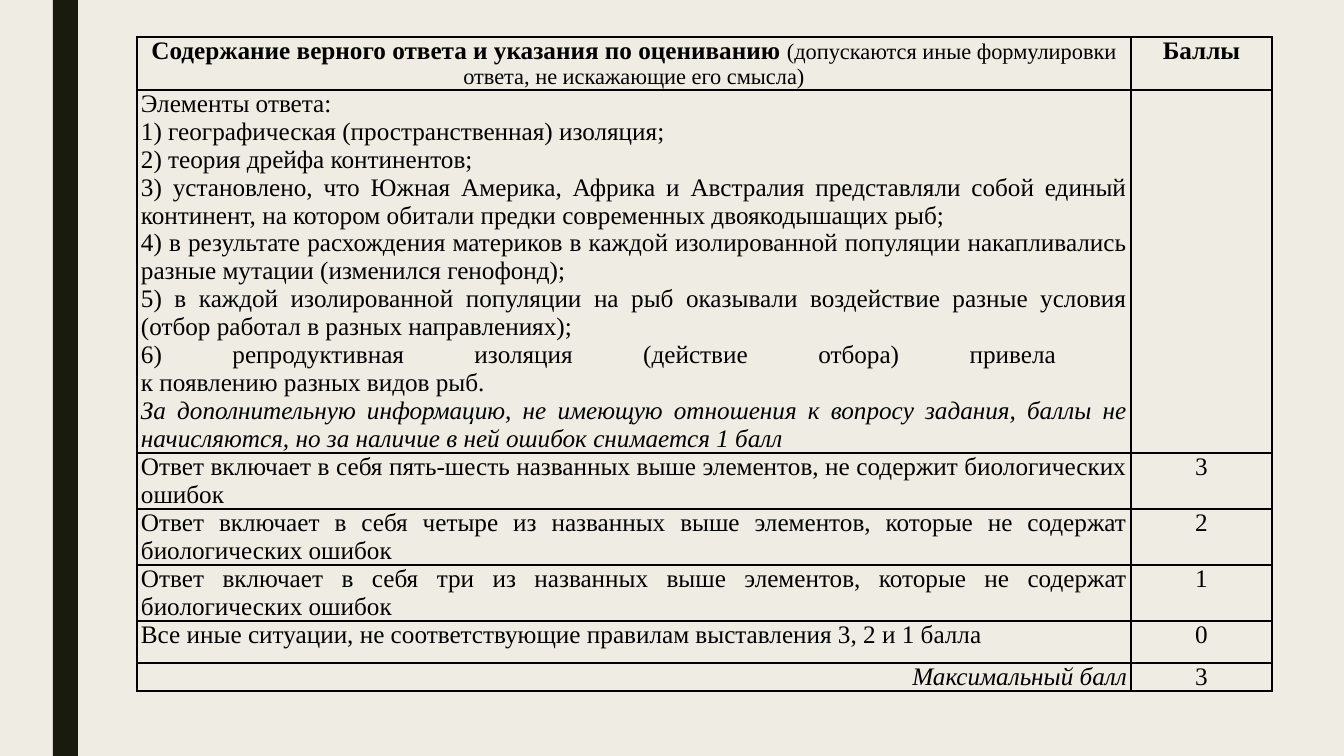
import pptx
import pptx.dml.color
import pptx.enum.shapes
import pptx.enum.text
import pptx.oxml
import pptx.oxml.ns
import pptx.util

PX = 12700 * 72 / 100.8  # EMU in one px
COLORS = {"background": "EFEDE3", "stripe": "191B0E", "ink": "000000"}
FONT = "Times New Roman"
ALIGN = pptx.enum.text.PP_ALIGN

COLUMN_WIDTHS = [994, 141]
ROW_HEIGHTS = [53, 363, 56, 56, 56, 42, 28]

HEADING = "Содержание верного ответа и указания по оцениванию "
HEADING_NOTE = "(допускаются иные формулировки ответа, не искажающие его смысла)"
ANSWER = [
    "Элементы ответа:",
    "1) географическая (пространственная) изоляция;",
    "2) теория дрейфа континентов;",
    "3) установлено, что Южная Америка, Африка и Австралия представляли собой "
    "единый континент, на котором обитали предки современных двоякодышащих рыб;",
    "4) в результате расхождения материков в каждой изолированной популяции "
    "накапливались разные мутации (изменился генофонд);",
    "5) в каждой изолированной популяции на рыб оказывали воздействие разные "
    "условия (отбор работал в разных направлениях);",
    "6) репродуктивная изоляция (действие отбора) привела \nк появлению разных видов рыб.",
]
ANSWER_NOTE = (
    "За дополнительную информацию, не имеющую отношения к вопросу задания, "
    "баллы не начисляются, но за наличие в ней ошибок снимается 1 балл"
)
CRITERIA = [
    ("Ответ включает в себя пять-шесть названных выше элементов, "
     "не содержит биологических ошибок", "3"),
    ("Ответ включает в себя четыре из названных выше элементов, "
     "которые не содержат биологических ошибок", "2"),
    ("Ответ включает в себя три из названных выше элементов, "
     "которые не содержат биологических ошибок", "1"),
    ("Все иные ситуации, не соответствующие правилам выставления 3, 2 и 1 балла", "0"),
]


def px(length):
    return pptx.util.Emu(round(length * PX))


def rgb(name):
    return pptx.dml.color.RGBColor.from_string(COLORS[name])


def style_font(font, size=18, bold=False, italic=False):
    font.name = FONT
    font.size = pptx.util.Pt(size)
    font.bold = bold
    font.italic = italic
    font.color.rgb = rgb("ink")


def write(paragraph, text, align, **style):
    paragraph.text = text
    paragraph.alignment = align
    style_font(paragraph.font, **style)


def format_cell(cell):
    """Clear fill, narrow margins and a thin black border on every side."""
    cell.margin_left = cell.margin_right = px(4)
    cell.margin_top = cell.margin_bottom = 0
    properties = cell._tc.get_or_add_tcPr()
    for side in ("lnL", "lnR", "lnT", "lnB"):
        properties.append(pptx.oxml.parse_xml(
            f'<a:{side} {pptx.oxml.ns.nsdecls("a")} w="12700"><a:solidFill>'
            f'<a:srgbClr val="{COLORS["ink"]}"/></a:solidFill></a:{side}>'))
    cell.fill.background()


def add_stripe(slide, left, top, width, height):
    stripe = slide.shapes.add_shape(
        pptx.enum.shapes.MSO_SHAPE.RECTANGLE, px(left), px(top), px(width), px(height))
    stripe.shadow.inherit = False
    stripe.fill.solid()
    stripe.fill.fore_color.rgb = rgb("stripe")
    stripe.line.fill.background()


def fill_heading(heading, points):
    paragraph = heading.text_frame.paragraphs[0]
    paragraph.alignment = ALIGN.CENTER
    for text, size, bold in ((HEADING, 18, True), (HEADING_NOTE, 16, False)):
        run = paragraph.add_run()
        run.text = text
        style_font(run.font, size, bold)
    write(points.text_frame.paragraphs[0], "Баллы", ALIGN.CENTER, bold=True)


def fill_answer(answer):
    frame = answer.text_frame
    for index, line in enumerate(ANSWER + [ANSWER_NOTE]):
        paragraph = frame.add_paragraph() if index else frame.paragraphs[0]
        write(paragraph, line, ALIGN.JUSTIFY, italic=line == ANSWER_NOTE)


def fill_score(criterion, points, text, score, align=ALIGN.JUSTIFY, italic=False):
    write(criterion.text_frame.paragraphs[0], text, align, italic=italic)
    write(points.text_frame.paragraphs[0], score, ALIGN.CENTER)


def add_rubric(slide, left, top):
    rubric = slide.shapes.add_table(
        len(ROW_HEIGHTS), len(COLUMN_WIDTHS), px(left), px(top),
        px(sum(COLUMN_WIDTHS)), px(sum(ROW_HEIGHTS))).table
    rubric.first_row = rubric.horz_banding = False
    for column, width in zip(rubric.columns, COLUMN_WIDTHS):
        column.width = px(width)
    for row, height in zip(rubric.rows, ROW_HEIGHTS):
        row.height = px(height)
    for cell in rubric.iter_cells():
        format_cell(cell)

    rows = [row.cells for row in rubric.rows]
    fill_heading(*rows[0])
    fill_answer(rows[1][0])
    for cells, (text, score) in zip(rows[2:], CRITERIA):
        fill_score(*cells, text, score)
    fill_score(*rows[-1], "Максимальный балл", "3", ALIGN.RIGHT, italic=True)


def main():
    deck = pptx.Presentation()
    deck.slide_width, deck.slide_height = px(1344), px(756)
    slide = deck.slides.add_slide(deck.slide_layouts[6])
    slide.background.fill.solid()
    slide.background.fill.fore_color.rgb = rgb("background")

    # Dark stripe along the left edge
    add_stripe(slide, 53, 0, 25, 756)
    # Scoring table
    add_rubric(slide, 137, 37)
    deck.save("out.pptx")


if __name__ == "__main__":
    main()
